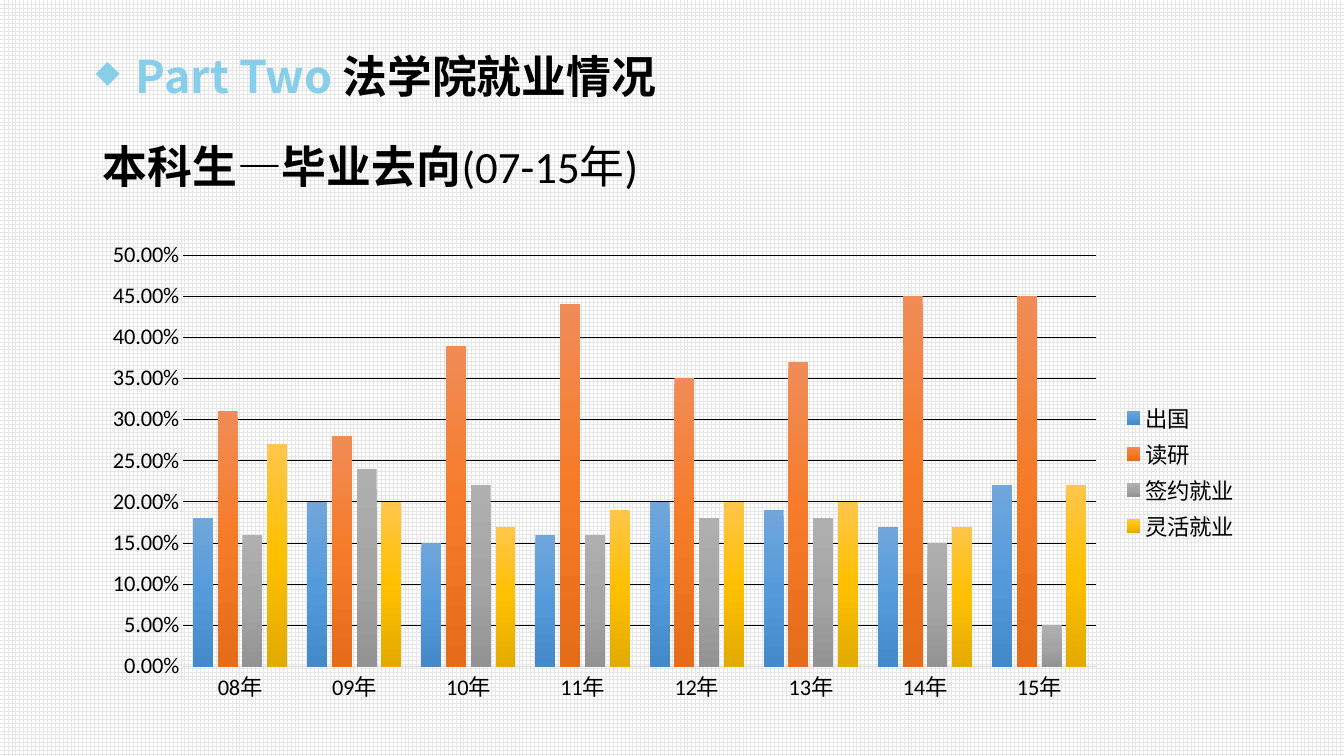
from copy import deepcopy
from dataclasses import dataclass

from lxml.etree import SubElement
from pptx import Presentation
from pptx.chart.data import CategoryChartData
from pptx.dml.color import RGBColor as Color
from pptx.enum.chart import XL_CHART_TYPE as ChartType
from pptx.enum.chart import XL_LEGEND_POSITION as LegendPosition
from pptx.enum.chart import XL_TICK_MARK as TickMark
from pptx.enum.dml import MSO_PATTERN as Pattern
from pptx.enum.text import MSO_ANCHOR as Anchor
from pptx.oxml.ns import qn
from pptx.util import Inches, Pt


@dataclass(frozen=True)
class Theme:
    latin: str = "Calibri"
    asian: str = "Noto Sans CJK SC"
    heading: int = 32
    chart: int = 16
    ink: str = "000000"
    sky: str = "87CEEB"
    paper: str = "FFFFFF"
    grid: str = "E7E6E6"
    axis: str = "D9D9D9"
    series: tuple = (
        ("71A6DB", "559BDB", "448ACA"),
        ("F18C57", "F67B28", "E56C19"),
        ("AFAFAF", "A5A5A5", "939393"),
        ("FFC64B", "FFC000", "E3AB00"),
    )


@dataclass(frozen=True)
class Span:
    text: str
    color: str
    font: str
    bold: bool = True


YEARS = [f"{year:02}年" for year in range(8, 16)]
DESTINATIONS = {
    "出国": (0.18, 0.2, 0.15, 0.16, 0.2, 0.19, 0.17, 0.22),
    "读研": (0.31, 0.28, 0.39, 0.44, 0.35, 0.37, 0.45, 0.45),
    "签约就业": (0.16, 0.24, 0.22, 0.16, 0.18, 0.18, 0.15, 0.05),
    "灵活就业": (0.27, 0.2, 0.17, 0.19, 0.2, 0.2, 0.17, 0.22),
}


class SlideBuilder:
    def __init__(self, page, theme):
        self.page = page
        self.theme = theme

    def background(self):
        fill = self.page.background.fill
        fill.patterned()
        fill.pattern = Pattern.LARGE_GRID
        fill.fore_color.rgb = Color.from_string(self.theme.grid)
        fill.back_color.rgb = Color.from_string(self.theme.paper)

    def heading(self, area, spans, anchor=Anchor.TOP, spacing=1.0, bullet=None):
        box = self.page.shapes.add_textbox(*map(Inches, area))
        frame = box.text_frame
        frame.word_wrap = True
        frame.vertical_anchor = anchor
        para = frame.paragraphs[0]
        para.line_spacing = spacing
        para.font.size = Pt(self.theme.heading)
        if bullet:
            self.bullet(para, bullet)
        for span in spans:
            run = para.add_run()
            run.text = span.text
            run.font.size = Pt(self.theme.heading)
            run.font.name = span.font
            run.font.bold = span.bold
            run.font.color.rgb = Color.from_string(span.color)
            east_asian = SubElement(run.font._element, qn("a:ea"))
            east_asian.set("typeface", self.theme.asian)

    def bullet(self, para, symbol):
        properties = para._p.get_or_add_pPr()
        properties.set("marL", str(Inches(0.5)))
        properties.set("indent", str(Inches(-0.4)))
        defaults = properties.find(qn("a:defRPr"))
        for tag, name, value in (
            ("a:buSzPct", "val", "70000"),
            ("a:buChar", "char", symbol),
        ):
            defaults.addprevious(properties.makeelement(qn(tag), {name: value}))

    def style_font(self, font):
        font.size = Pt(self.theme.chart)
        font.name = self.theme.latin
        font.color.rgb = Color.from_string(self.theme.ink)

    def gradient(self, series, colors):
        fill = series.format.fill
        fill.gradient()
        fill.gradient_angle = 270
        stops = series._element.find(".//" + qn("a:gsLst"))
        stops.append(deepcopy(stops[0]))
        for index, (stop, color) in enumerate(zip(fill.gradient_stops, colors)):
            stop.position = index / 2
            stop.color.rgb = Color.from_string(color)

    def column_chart(self, area, categories, series_values):
        data = CategoryChartData(number_format="0.00%")
        data.categories = categories
        for name, values in series_values.items():
            data.add_series(name, values)
        chart = self.page.shapes.add_chart(
            ChartType.COLUMN_CLUSTERED, *map(Inches, area), data
        ).chart
        self.style_font(chart.font)
        chart.has_title = False
        chart.has_legend = True
        chart.legend.position = LegendPosition.RIGHT
        chart.legend.include_in_layout = False
        self.style_font(chart.legend.font)

        plot = chart.plots[0]
        plot.gap_width = 100
        plot.overlap = -24
        plot.vary_by_categories = False
        for series, colors in zip(plot.series, self.theme.series):
            self.gradient(series, colors)

        for axis in (chart.category_axis, chart.value_axis):
            axis.major_tick_mark = TickMark.NONE
            axis.minor_tick_mark = TickMark.NONE
            self.style_font(axis.tick_labels.font)
        baseline = chart.category_axis.format.line
        baseline.width = Pt(1)
        baseline.color.rgb = Color.from_string(self.theme.axis)

        scale = chart.value_axis
        scale.minimum_scale = 0
        scale.maximum_scale = 0.5
        scale.major_unit = 0.05
        scale.format.line.fill.background()
        scale.tick_labels.number_format = "0.00%"
        scale.tick_labels.number_format_is_linked = False
        gridline = scale.major_gridlines.format.line
        gridline.width = Pt(0.75)
        gridline.color.rgb = Color.from_string(self.theme.ink)


def main():
    theme = Theme()
    deck = Presentation()
    deck.slide_width = Inches(13.33)
    deck.slide_height = Inches(7.5)
    builder = SlideBuilder(deck.slides.add_slide(deck.slide_layouts[6]), theme)
    builder.background()
    builder.heading(
        (0.92, 1.29, 11.5, 0.78),
        [
            Span("本科生—毕业去向", theme.ink, theme.asian),
            Span("(07-15年)", theme.ink, theme.latin, bold=False),
        ],
        anchor=Anchor.MIDDLE,
        spacing=0.9,
    )
    builder.column_chart((0.89, 2.3, 11.5, 4.76), YEARS, DESTINATIONS)
    builder.heading(
        (0.75, 0.43, 9.32, 0.64),
        [
            Span("Part Two ", theme.sky, theme.asian),
            Span("法学院就业情况", theme.ink, theme.asian),
        ],
        bullet="◆",
    )
    deck.save("out.pptx")


if __name__ == "__main__":
    main()
